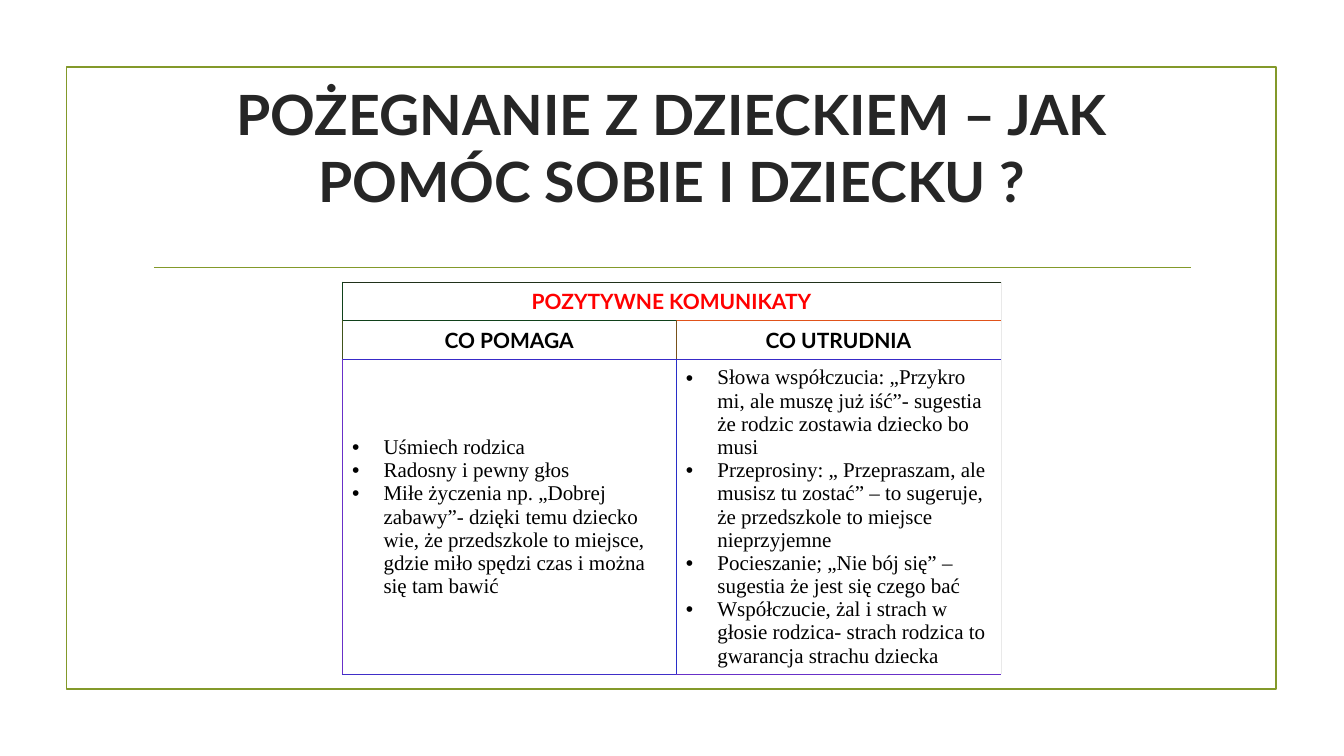
from lxml import etree
from pptx import Presentation
from pptx.dml.color import RGBColor
from pptx.enum.shapes import MSO_CONNECTOR, MSO_SHAPE
from pptx.enum.text import MSO_ANCHOR, MSO_AUTO_SIZE, PP_ALIGN
from pptx.oxml.ns import qn
from pptx.util import Pt

COLORS = {"olive": "83992A", "title": "262626", "red": "FF0000",
          "black": "000000", "white": "FFFFFF"}
HEADING_FONT, LIST_FONT = "Lato", "Times New Roman"


def style_runs(paragraph, font_name, size, color, bold):
    for run in paragraph.runs:
        run.font.name = font_name
        run.font.size = Pt(size)
        run.font.bold = bold
        run.font.color.rgb = RGBColor.from_string(color)


def set_borders(cell, colors):
    """Draw thin borders in the order left, right, top, bottom."""
    properties = cell._tc.get_or_add_tcPr()
    for position, (side, color) in enumerate(zip("LRTB", colors)):
        line = etree.Element(qn(f"a:ln{side}"), w=str(Pt(0.6)))
        fill = etree.SubElement(line, qn("a:solidFill"))
        etree.SubElement(fill, qn("a:srgbClr"), val=color)
        properties.insert(position, line)


presentation = Presentation()
presentation.slide_width, presentation.slide_height = Pt(960), Pt(540)
slide = presentation.slides.add_slide(presentation.slide_layouts[5])

# Frame and rule under the title
frame = slide.shapes.add_shape(MSO_SHAPE.RECTANGLE, Pt(47.5), Pt(48), Pt(864), Pt(444))
frame.shadow.inherit = False
frame.fill.background()
rule = slide.shapes.add_connector(MSO_CONNECTOR.STRAIGHT, Pt(110), Pt(191), Pt(850.5), Pt(191))
etree.SubElement(rule._element.spPr, qn("a:effectLst"))
for shape in (frame, rule):
    shape.line.color.rgb = RGBColor.from_string(COLORS["olive"])
    shape.line.width = Pt(1.25)

# Title, raised by a deep bottom margin
title = slide.shapes.title
title.left, title.top, title.width, title.height = Pt(102), Pt(77), Pt(756), Pt(103)
title_frame = title.text_frame
title_frame.text = "POŻEGNANIE Z DZIECKIEM – JAK POMÓC SOBIE I DZIECKU ?"
title_frame.word_wrap = True
title_frame.auto_size = MSO_AUTO_SIZE.NONE
title_frame.vertical_anchor = MSO_ANCHOR.MIDDLE
title_frame.margin_bottom = Pt(51)
title_frame.paragraphs[0].alignment = PP_ALIGN.CENTER
style_runs(title_frame.paragraphs[0], HEADING_FONT, 39.6, COLORS["title"], True)

# Table: two heading rows above two bulleted lists
HELPS = [
    "Uśmiech rodzica",
    "Radosny i pewny głos",
    "Miłe życzenia np. „Dobrej zabawy”- dzięki temu dziecko wie, że przedszkole "
    "to miejsce, gdzie miło spędzi czas i można się tam bawić",
]
HINDERS = [
    "Słowa współczucia: „Przykro mi, ale muszę już iść”- sugestia że rodzic "
    "zostawia dziecko bo musi",
    "Przeprosiny: „ Przepraszam, ale musisz tu zostać” – to sugeruje, że "
    "przedszkole to miejsce nieprzyjemne",
    "Pocieszanie; „Nie bój się” – sugestia że jest się czego bać",
    "Współczucie, żal i strach w głosie rodzica- strach rodzica to gwarancja "
    "strachu dziecka",
]
ROWS = [
    [["POZYTYWNE KOMUNIKATY"], []],
    [["CO POMAGA"], ["CO UTRUDNIA"]],
    [HELPS, HINDERS],
]
BORDERS = [
    [("10411A", "E9E9E9", "20311A", "10411A"), ("10411A", "E9E9E9", "20311A", "E0521A")],
    [("40531A", "78511A", "10411A", "382AC8"), ("78511A", "E9E9E9", "E0521A", "382AC8")],
    [("6830C8", "282EC8", "382AC8", "402EC8"), ("282EC8", "E9E9E9", "382AC8", "6830C8")],
]
COLUMN_WIDTHS = [238.5, 232]
ROW_HEIGHTS = [27, 27, 225]

table = slide.shapes.add_table(3, 2, Pt(244.5), Pt(201.5), Pt(sum(COLUMN_WIDTHS)),
                               Pt(sum(ROW_HEIGHTS))).table
table.first_row = table.horz_banding = False
for column, width in zip(table.columns, COLUMN_WIDTHS):
    column.width = Pt(width)
for row, height in zip(table.rows, ROW_HEIGHTS):
    row.height = Pt(height)
table.cell(0, 0).merge(table.cell(0, 1))

for row_index, row in enumerate(ROWS):
    is_list = row_index == 2
    for column_index, lines in enumerate(row):
        cell = table.cell(row_index, column_index)
        cell.fill.solid()
        cell.fill.fore_color.rgb = RGBColor.from_string(COLORS["white"])
        set_borders(cell, BORDERS[row_index][column_index])
        cell.vertical_anchor = MSO_ANCHOR.MIDDLE
        cell.margin_left = cell.margin_right = Pt(7)
        cell.margin_top, cell.margin_bottom = Pt(5), Pt(4.5)
        if not lines:
            continue
        cell.text_frame.text = "\n".join(lines)
        for paragraph in cell.text_frame.paragraphs:
            if is_list:
                properties = paragraph._p.get_or_add_pPr()
                properties.set("marL", str(Pt(22.5)))
                properties.set("indent", str(-Pt(22.5)))
                etree.SubElement(properties, qn("a:buFont"), typeface="Arial")
                etree.SubElement(properties, qn("a:buChar"), char="•")
                style_runs(paragraph, LIST_FONT, 15, COLORS["black"], False)
            else:
                paragraph.alignment = PP_ALIGN.CENTER
                color = COLORS["red" if row_index == 0 else "black"]
                style_runs(paragraph, HEADING_FONT, 15, color, True)

presentation.save("out.pptx")
